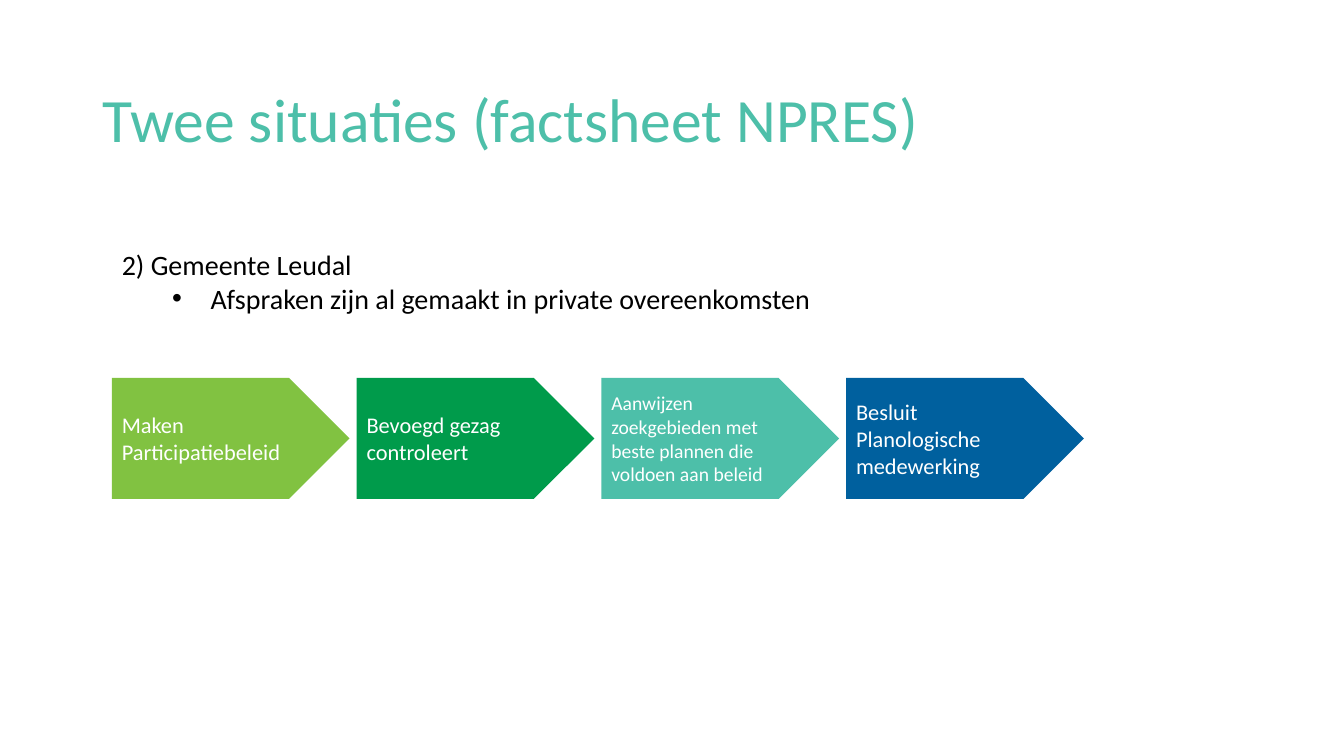
from lxml import etree
from pptx import Presentation
from pptx.dml.color import RGBColor
from pptx.enum.shapes import MSO_SHAPE
from pptx.enum.text import MSO_ANCHOR, PP_ALIGN
from pptx.oxml.ns import qn
from pptx.util import Inches, Pt

BLACK = RGBColor(0x00, 0x00, 0x00)
WHITE = RGBColor(0xFF, 0xFF, 0xFF)
LIME = RGBColor(0x81, 0xC2, 0x41)
GREEN = RGBColor(0x00, 0x9B, 0x4B)
TEAL = RGBColor(0x4D, 0xBF, 0xA9)
BLUE = RGBColor(0x00, 0x60, 0x9E)

FONT_NAME = "Calibri"
SLIDE_WIDTH, SLIDE_HEIGHT = Inches(13.33), Inches(7.5)
TITLE_BOX = (Inches(0.92), Inches(0.84), Inches(11.5), Inches(1.45))
SITUATION_BOX = (Inches(1.11), Inches(2.41), Inches(7.93), Inches(1.08))
PROCESS_BOX = (Inches(1.11), Inches(3.75), Inches(9.64), Inches(1.2))
STEP_GAP = Inches(0.07)

STEPS = [
    ("Maken\nParticipatiebeleid", LIME, 16),
    ("Bevoegd gezag controleert", GREEN, 16),
    ("Aanwijzen zoekgebieden met beste plannen die voldoen aan beleid", TEAL, 14),
    ("Besluit\nPlanologische medewerking", BLUE, 16),
]


def format_text(text_frame, size, color):
    """Left-align every paragraph and give its runs one font."""
    for paragraph in text_frame.paragraphs:
        paragraph.alignment = PP_ALIGN.LEFT
        for run in paragraph.runs:
            run.font.name = FONT_NAME
            run.font.size = Pt(size)
            run.font.color.rgb = color


def add_bullet(paragraph, indent, hanging):
    """Give a paragraph a round bullet with a hanging indent."""
    properties = paragraph._p.get_or_add_pPr()
    properties.set("marL", str(indent))
    properties.set("indent", str(-hanging))
    etree.SubElement(properties, qn("a:buFont")).set("typeface", "Arial")
    etree.SubElement(properties, qn("a:buChar")).set("char", "•")


def add_title(slide, box):
    """Place the slide title in its placeholder."""
    title = slide.shapes.title
    title.left, title.top, title.width, title.height = box
    text_frame = title.text_frame
    text_frame.text = "Twee situaties (factsheet NPRES)"
    text_frame.vertical_anchor = MSO_ANCHOR.TOP
    text_frame.paragraphs[0].line_spacing = 0.9
    format_text(text_frame, 44, TEAL)


def add_situation(slide, box):
    """Write the situation and its bulleted explanation."""
    text_frame = slide.shapes.add_textbox(*box).text_frame
    text_frame.word_wrap = True
    text_frame.text = (
        "2) Gemeente Leudal\nAfspraken zijn al gemaakt in private overeenkomsten"
    )
    explanation = text_frame.paragraphs[1]
    explanation.level = 1
    add_bullet(explanation, Inches(0.88), Inches(0.38))
    format_text(text_frame, 20, BLACK)


def add_process(slide, box):
    """Draw the steps as equal arrows across the box."""
    left, top, width, height = box
    pitch = (width + STEP_GAP) // len(STEPS)
    for column, (label, color, size) in enumerate(STEPS):
        step = slide.shapes.add_shape(
            MSO_SHAPE.PENTAGON, left + column * pitch, top, pitch - STEP_GAP, height
        )
        step.shadow.inherit = False
        step.fill.solid()
        step.fill.fore_color.rgb = color
        step.line.fill.background()
        text_frame = step.text_frame
        text_frame.word_wrap = True
        text_frame.vertical_anchor = MSO_ANCHOR.MIDDLE
        text_frame.text = label
        format_text(text_frame, size, WHITE)


def main():
    """Build the slide and save it."""
    presentation = Presentation()
    presentation.slide_width = SLIDE_WIDTH
    presentation.slide_height = SLIDE_HEIGHT
    slide = presentation.slides.add_slide(presentation.slide_layouts[5])
    add_title(slide, TITLE_BOX)
    add_process(slide, PROCESS_BOX)
    add_situation(slide, SITUATION_BOX)
    presentation.save("out.pptx")


if __name__ == "__main__":
    main()
